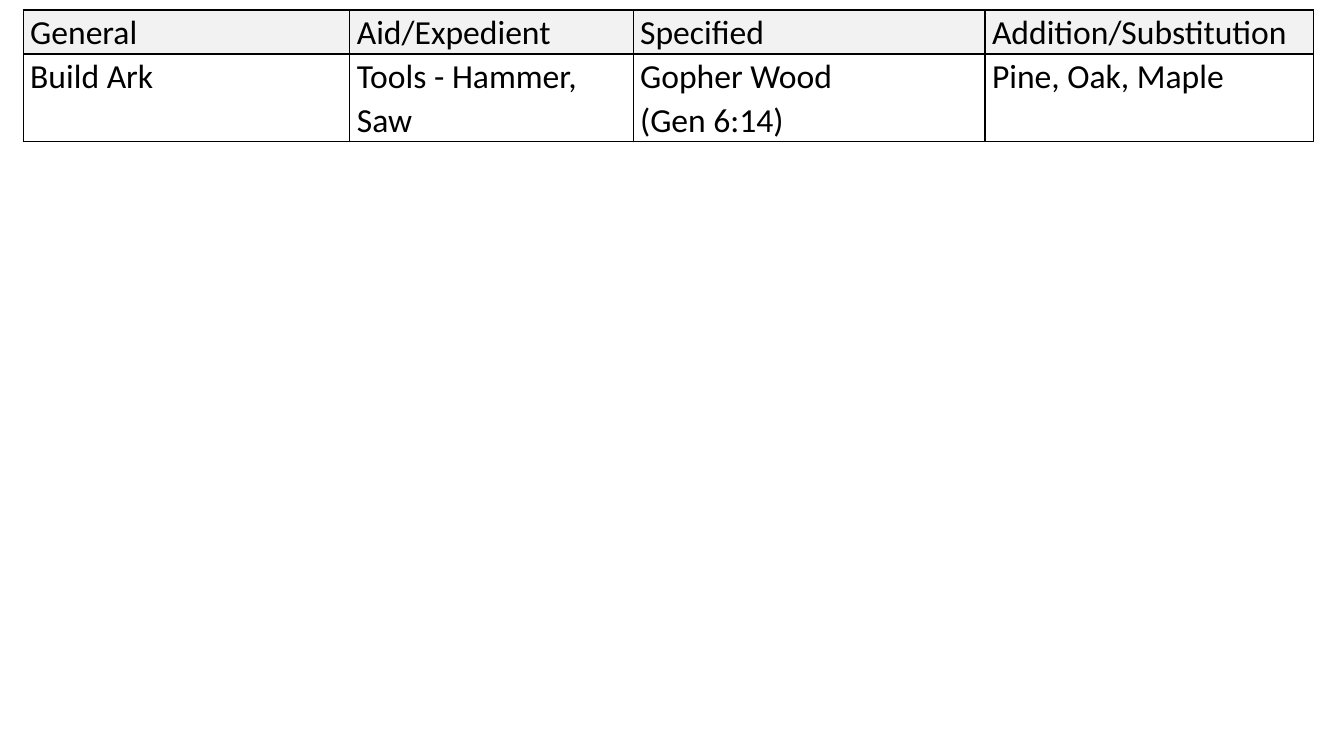
from lxml import etree
from pptx import Presentation
from pptx.dml.color import RGBColor
from pptx.oxml.ns import qn
from pptx.util import Inches, Pt

# Content: each cell is a list of paragraphs
ROWS = [
    [["General"], ["Aid/Expedient"], ["Specified"], ["Addition/Substitution"]],
    [["Build Ark"], ["Tools - Hammer, Saw"], ["Gopher Wood", "(Gen 6:14)"],
     ["Pine, Oak, Maple"]],
]

# Layout and style
LEFT, TOP = 0.23, 0.1
COL_WIDTHS = [3.24, 2.81, 3.49, 3.26]
ROW_HEIGHTS = [0.42, 0.86]
SIDE_MARGIN = 0.07
FONT, SIZE, LINE_SPACING = "Calibri", 24, 1.07
BORDER_WIDTH = 1
COLORS = {"text": "000000", "border": "000000", "header": "F2F2F2"}


def add_borders(cell):
    tcPr = cell._tc.get_or_add_tcPr()
    for side in ("a:lnL", "a:lnR", "a:lnT", "a:lnB"):
        ln = etree.SubElement(tcPr, qn(side), w=str(Pt(BORDER_WIDTH)))
        fill = etree.SubElement(ln, qn("a:solidFill"))
        etree.SubElement(fill, qn("a:srgbClr"), val=COLORS["border"])


def fill_cell(cell, lines, is_header):
    cell.margin_left = cell.margin_right = Inches(SIDE_MARGIN)
    cell.margin_top = cell.margin_bottom = 0
    add_borders(cell)
    if is_header:
        cell.fill.solid()
        cell.fill.fore_color.rgb = RGBColor.from_string(COLORS["header"])
    else:
        cell.fill.background()

    tf = cell.text_frame
    for i, line in enumerate(lines):
        p = tf.add_paragraph() if i else tf.paragraphs[0]
        p.line_spacing = LINE_SPACING
        r = p.add_run()
        r.text = line
        r.font.name = FONT
        r.font.size = Pt(SIZE)
        r.font.bold = False
        r.font.color.rgb = RGBColor.from_string(COLORS["text"])


def main():
    prs = Presentation()
    prs.slide_width, prs.slide_height = Inches(13.33), Inches(7.5)
    s = prs.slides.add_slide(prs.slide_layouts[6])

    # Table
    table = s.shapes.add_table(
        len(ROW_HEIGHTS), len(COL_WIDTHS), Inches(LEFT), Inches(TOP),
        Inches(sum(COL_WIDTHS)), Inches(sum(ROW_HEIGHTS))).table
    table.first_row = table.horz_banding = False
    for col, width in zip(table.columns, COL_WIDTHS):
        col.width = Inches(width)
    for row, height in zip(table.rows, ROW_HEIGHTS):
        row.height = Inches(height)

    # Cells
    for i, texts in enumerate(ROWS):
        for j, lines in enumerate(texts):
            fill_cell(table.cell(i, j), lines, is_header=i == 0)

    prs.save("out.pptx")


if __name__ == "__main__":
    main()
